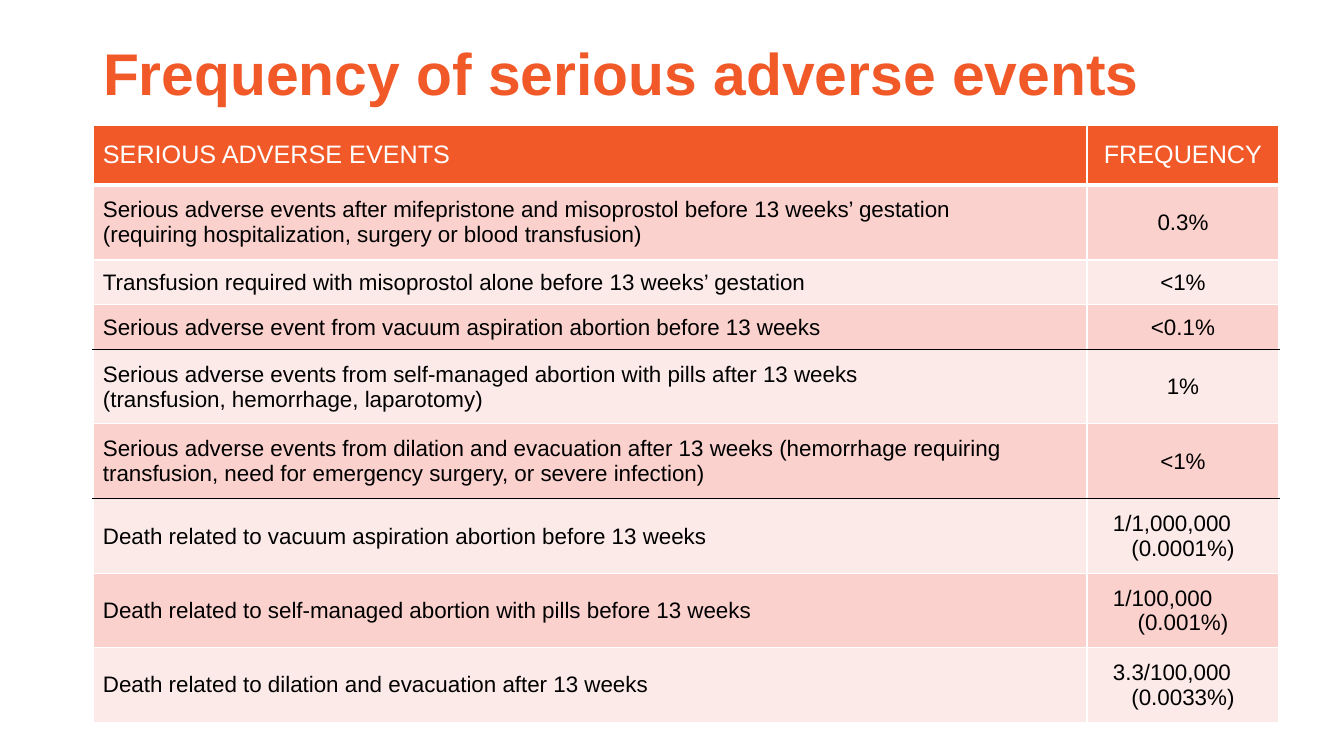
from lxml.etree import SubElement
from pptx import Presentation
from pptx.dml.color import RGBColor
from pptx.enum.text import MSO_ANCHOR, PP_ALIGN
from pptx.oxml.ns import qn
from pptx.util import Emu, Pt

TITLE = "Frequency of serious adverse events"
HEADER = ("SERIOUS ADVERSE EVENTS", "FREQUENCY")
EVENTS = [
    ("Serious adverse events after mifepristone and misoprostol before 13 weeks’ gestation\n"
     "(requiring hospitalization, surgery or blood transfusion)", "0.3%"),
    ("Transfusion required with misoprostol alone before 13 weeks’ gestation", "<1%"),
    ("Serious adverse event from vacuum aspiration abortion before 13 weeks", "<0.1%"),
    ("Serious adverse events from self-managed abortion with pills after 13 weeks\n"
     "(transfusion, hemorrhage, laparotomy)", "1%"),
    ("Serious adverse events from dilation and evacuation after 13 weeks (hemorrhage requiring "
     "transfusion, need for emergency surgery, or severe infection)", "<1%"),
    ("Death related to vacuum aspiration abortion before 13 weeks", "1/1,000,000\n(0.0001%)"),
    ("Death related to self-managed abortion with pills before 13 weeks", "1/100,000\n(0.001%)"),
    ("Death related to dilation and evacuation after 13 weeks", "3.3/100,000\n(0.0033%)"),
]
ROW_HEIGHTS = [60, 75, 45, 45, 74, 75, 75, 74, 75]
COLUMN_WIDTHS = [994, 192]
GROUP_ENDS = (3, 5)

FONT = "Arial"
ORANGE = RGBColor(0xF1, 0x59, 0x28)
PINK = RGBColor(0xFA, 0xD1, 0xCD)
PALE_PINK = RGBColor(0xFC, 0xEA, 0xE8)
WHITE = RGBColor(0xFF, 0xFF, 0xFF)
BLACK = RGBColor(0, 0, 0)


def px(length):
    return Emu(round(length * 914400 / 100.8))


def style_font(font, size, color, bold=False):
    font.name = FONT
    font.size = Pt(size)
    font.bold = bold
    font.color.rgb = color


def set_borders(cell, row):
    top = BLACK if row - 1 in GROUP_ENDS else WHITE
    bottom = BLACK if row in GROUP_ENDS else WHITE
    header_edge = {0: "lnB", 1: "lnT"}.get(row)
    properties = cell._tc.get_or_add_tcPr()
    edges = (("lnL", WHITE), ("lnR", WHITE), ("lnT", top), ("lnB", bottom))
    for position, (edge, color) in enumerate(edges):
        width = 3 if edge == header_edge else 1
        line = SubElement(properties, qn(f"a:{edge}"), w=str(Pt(width)))
        SubElement(SubElement(line, qn("a:solidFill")), qn("a:srgbClr"), val=str(color))
        properties.insert(position, line)


def fill_cell(cell, text, row, column):
    cell.fill.solid()
    cell.fill.fore_color.rgb = ORANGE if row == 0 else PINK if row % 2 else PALE_PINK
    set_borders(cell, row)
    cell.vertical_anchor = MSO_ANCHOR.MIDDLE
    cell.margin_left = cell.margin_right = px(10)
    cell.margin_top = cell.margin_bottom = px(9)
    cell.text_frame.text = text
    paragraphs = cell.text_frame.paragraphs
    for paragraph in paragraphs:
        paragraph.alignment = PP_ALIGN.CENTER if column else PP_ALIGN.LEFT
        for run in paragraph.runs:
            style_font(run.font, 16 if row else 18, BLACK if row else WHITE)
    if column and len(paragraphs) > 1:
        paragraphs[0].alignment = PP_ALIGN.LEFT
        paragraphs[0]._p.get_or_add_pPr().set("marL", str(px(16)))


def main():
    presentation = Presentation()
    presentation.slide_width, presentation.slide_height = px(1344), px(756)
    slide = presentation.slides.add_slide(presentation.slide_layouts[5])

    title = slide.shapes.title
    title.left, title.top, title.width, title.height = px(93), px(40), px(1159), px(146)
    title.text_frame.text = TITLE
    title.text_frame.vertical_anchor = MSO_ANCHOR.TOP
    heading = title.text_frame.paragraphs[0]
    heading.alignment = PP_ALIGN.LEFT
    heading.line_spacing = 0.9
    style_font(heading.runs[0].font, 42, ORANGE, bold=True)

    rows = [HEADER, *EVENTS]
    table = slide.shapes.add_table(
        len(rows), len(HEADER), px(93), px(125),
        px(sum(COLUMN_WIDTHS)), px(sum(ROW_HEIGHTS))).table
    for column, width in enumerate(COLUMN_WIDTHS):
        table.columns[column].width = px(width)
    for row, (texts, height) in enumerate(zip(rows, ROW_HEIGHTS)):
        table.rows[row].height = px(height)
        for column, text in enumerate(texts):
            fill_cell(table.cell(row, column), text, row, column)

    presentation.save("out.pptx")


if __name__ == "__main__":
    main()
